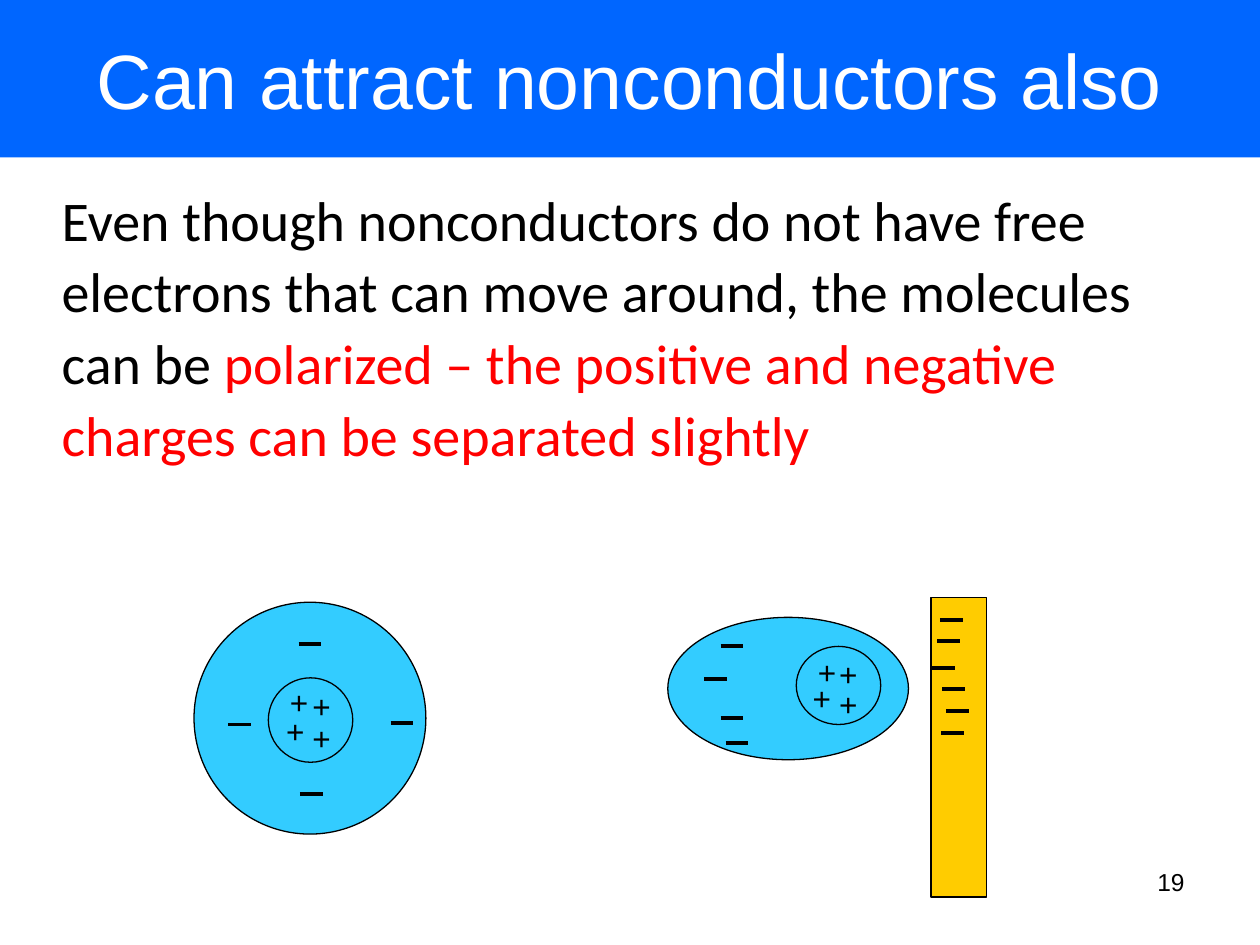
"""Build a slide on how a charged rod polarizes a nonconducting atom."""
from lxml.etree import SubElement
from pptx import Presentation
from pptx.dml.color import RGBColor
from pptx.enum.shapes import MSO_CONNECTOR, MSO_SHAPE
from pptx.enum.text import MSO_ANCHOR, MSO_AUTO_SIZE, PP_ALIGN
from pptx.oxml.ns import qn
from pptx.util import Inches, Pt

BLACK = RGBColor(0x00, 0x00, 0x00)
WHITE = RGBColor(0xFF, 0xFF, 0xFF)
RED = RGBColor(0xFF, 0x00, 0x00)
BLUE = RGBColor(0x00, 0x66, 0xFF)
SKY = RGBColor(0x33, 0xCC, 0xFF)
AMBER = RGBColor(0xFF, 0xCC, 0x00)
CHARGE_WIDTH = 0.18


def add_outline(group, kind, box, fill=None):
    outline = group.shapes.add_shape(kind, *map(Inches, box))
    outline.shadow.inherit = False
    if fill is None:
        outline.fill.background()
    else:
        outline.fill.solid()
        outline.fill.fore_color.rgb = fill
    outline.line.color.rgb = BLACK
    outline.line.width = Pt(0.75)


def add_electrons(group, positions):
    for x, y in positions:
        electron = group.shapes.add_connector(
            MSO_CONNECTOR.STRAIGHT, Inches(x), Inches(y), Inches(x + CHARGE_WIDTH), Inches(y))
        electron.line.color.rgb = BLACK
        electron.line.width = Pt(2.25)
        SubElement(electron._element.spPr, qn("a:effectLst"))


presentation = Presentation()
presentation.slide_width = Inches(10)
presentation.slide_height = Inches(7.5)
slide = presentation.slides.add_slide(presentation.slide_layouts[6])

page_number = slide.shapes.add_textbox(Inches(7.17), Inches(6.83), Inches(2.33), Inches(0.52))
page_number.text_frame.word_wrap = True
paragraph = page_number.text_frame.paragraphs[0]
paragraph.text = "19"
paragraph.alignment = PP_ALIGN.RIGHT
paragraph.font.name = "Arial"
paragraph.font.size = Pt(14)
paragraph.font.color.rgb = BLACK

title = slide.shapes.add_shape(MSO_SHAPE.RECTANGLE, 0, 0, Inches(10), Inches(1.25))
title.shadow.inherit = False
title.fill.solid()
title.fill.fore_color.rgb = BLUE
title.line.fill.background()
title.text_frame.vertical_anchor = MSO_ANCHOR.MIDDLE
paragraph = title.text_frame.paragraphs[0]
paragraph.text = "Can attract nonconductors also"
paragraph.alignment = PP_ALIGN.CENTER
paragraph.font.name = "Arial"
paragraph.font.size = Pt(44)
paragraph.font.color.rgb = WHITE

explanation = slide.shapes.add_textbox(Inches(0.39), Inches(1.48), Inches(9), Inches(2.36))
explanation.text_frame.word_wrap = True
explanation_lines = [
    [("Even though nonconductors do not have free", BLACK)],
    [("electrons that can move around, the molecules", BLACK)],
    [("can be ", BLACK), ("polarized – the positive and negative", RED)],
    [("charges can be separated slightly", RED)],
]
for index, pieces in enumerate(explanation_lines):
    paragraph = (explanation.text_frame.add_paragraph() if index
                 else explanation.text_frame.paragraphs[0])
    paragraph.line_spacing = 0.9
    paragraph.space_before = Pt(6.4)
    paragraph.font.name = "Calibri"
    paragraph.font.size = Pt(32)
    for words, color in pieces:
        run = paragraph.add_run()
        run.text = words
        run.font.color.rgb = color

atoms = [
    ((1.54, 4.78, 1.84, 1.84), (2.13, 5.38, 0.67, 0.67),
     [(2.3, 5.42), (2.48, 5.45), (2.48, 5.71), (2.27, 5.65)],
     [(2.37, 5.11), (3.1, 5.74), (2.38, 6.3), (1.81, 5.75)]),
    ((5.3, 4.9, 1.91, 1.13), (6.32, 5.13, 0.67, 0.62),
     [(6.49, 5.18), (6.66, 5.2), (6.66, 5.44), (6.45, 5.39)],
     [(5.72, 5.13), (5.72, 5.7), (5.76, 5.9), (5.59, 5.39)]),
]
for cloud, nucleus, protons, electrons in atoms:
    atom = slide.shapes.add_group_shape()
    add_outline(atom, MSO_SHAPE.OVAL, cloud, SKY)
    add_outline(atom, MSO_SHAPE.OVAL, nucleus)
    for x, y in protons:
        proton = atom.shapes.add_textbox(Inches(x), Inches(y), Inches(0.15), Inches(0.3))
        frame = proton.text_frame
        frame.margin_left = frame.margin_right = frame.margin_top = frame.margin_bottom = 0
        frame.word_wrap = False
        frame.auto_size = MSO_AUTO_SIZE.SHAPE_TO_FIT_TEXT
        paragraph = frame.paragraphs[0]
        paragraph.text = "+"
        paragraph.font.name = "Arial"
        paragraph.font.size = Pt(18)
        paragraph.font.color.rgb = BLACK
    add_electrons(atom, electrons)

rod = slide.shapes.add_group_shape()
add_outline(rod, MSO_SHAPE.RECTANGLE, (7.39, 4.74, 0.44, 2.38), AMBER)
add_electrons(rod, [(7.46, 4.92), (7.44, 5.09), (7.4, 5.3),
                    (7.48, 5.47), (7.51, 5.64), (7.47, 5.82)])

presentation.save("out.pptx")
